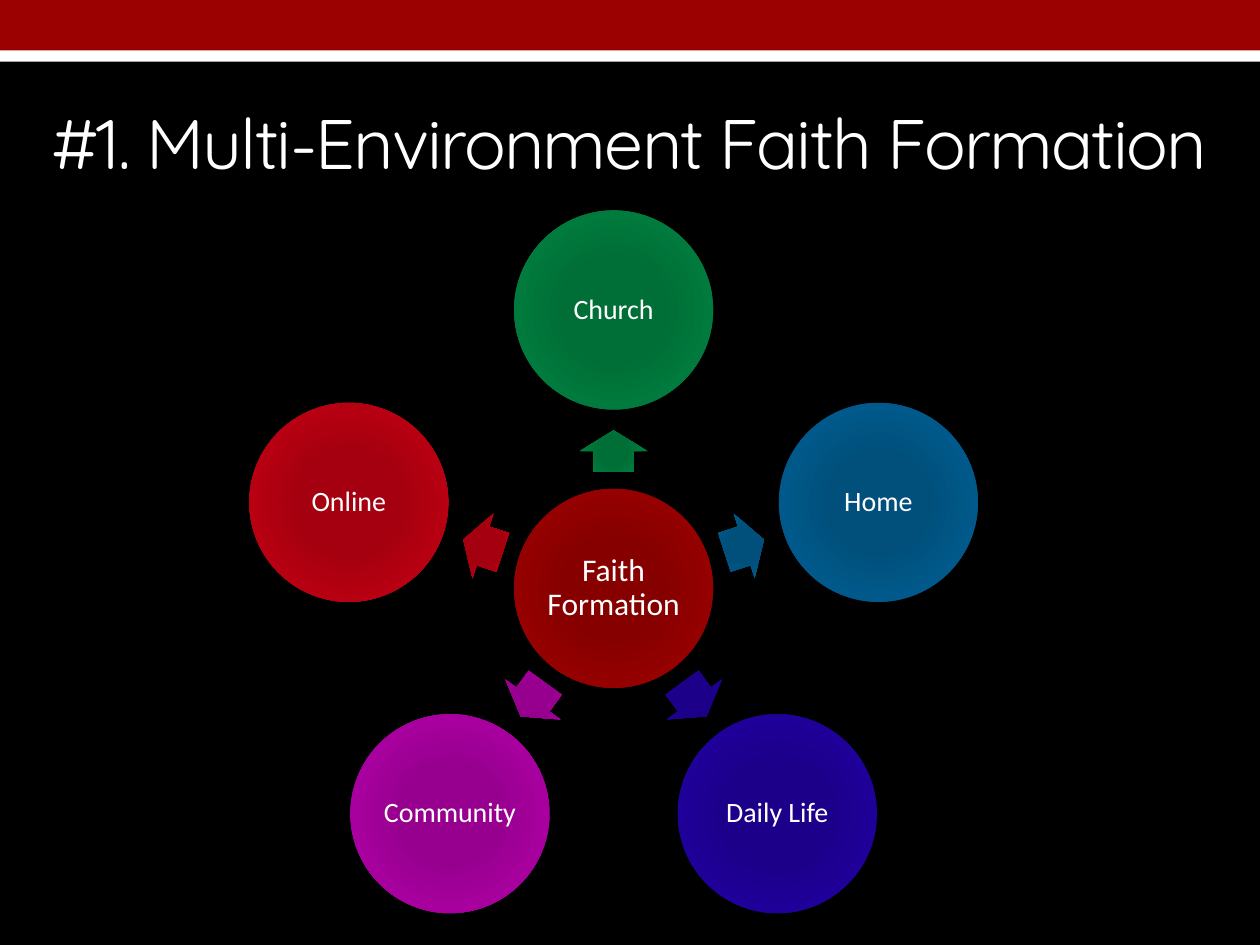
import math

import pptx
import pptx.dml.color
import pptx.enum.shapes
import pptx.enum.text
import pptx.oxml
import pptx.oxml.ns
import pptx.util

WIDTH, HEIGHT = 10, 7.5
HUB = (4.87, 4.67)
CIRCLE_SIZE = 1.58
ORBIT, ARROW_ORBIT = 2.21, 1.09
ARROW_LENGTH, ARROW_BREADTH = 0.33, 0.54

HUB_TONES = ("860000", "950000", "9B0101")
ENVIRONMENTS = [
    ("Church", ("006E37", "007A3D", "008040")),
    ("Home", ("00507B", "00598A", "025D8E")),
    ("Daily Life", ("1C0089", "1F0099", "23059B")),
    ("Community", ("97008F", "A8009F", "A808A0")),
    ("Online", ("A4000F", "B70011", "B50B1B")),
]


def rgb(hex_colour):
    return pptx.dml.color.RGBColor.from_string(hex_colour)


def write(frame, text, size, font="Calibri", colour="FFFFFF", inset=0.02,
          line_spacing=0.9, tracking=None):
    """Fill a text frame with one centred paragraph; tracking is in points."""
    frame.word_wrap = True
    frame.auto_size = pptx.enum.text.MSO_AUTO_SIZE.NONE
    frame.vertical_anchor = pptx.enum.text.MSO_ANCHOR.MIDDLE
    frame.margin_left = frame.margin_right = pptx.util.Inches(inset)
    frame.margin_top = frame.margin_bottom = pptx.util.Inches(inset)
    paragraph = frame.paragraphs[0]
    paragraph.alignment = pptx.enum.text.PP_ALIGN.CENTER
    paragraph.line_spacing = line_spacing
    run = paragraph.add_run()
    run.text = text
    run.font.size = pptx.util.Pt(size)
    run.font.name = font
    run.font.color.rgb = rgb(colour)
    if tracking is not None:
        run.font._element.set("spc", str(round(tracking * 100)))


def radial_fill(shape, tones):
    """Shade from the first tone at the centre to the last at the rim."""
    inner, middle, outer = tones
    stops = "".join(
        f'<a:gs pos="{share * 1000}"><a:srgbClr val="{tone}"/></a:gs>'
        for share, tone in ((0, inner), (34, inner), (70, middle), (100, outer)))
    radial = pptx.oxml.parse_xml(
        f'<a:gradFill {pptx.oxml.ns.nsdecls("a")} rotWithShape="1">'
        f'<a:gsLst>{stops}</a:gsLst><a:path path="circle">'
        '<a:fillToRect l="100000" t="100000" r="100000" b="100000"/>'
        '</a:path></a:gradFill>')
    shape.fill.gradient()
    properties = shape._element.spPr
    properties.replace(properties.find(pptx.oxml.ns.qn("a:gradFill")), radial)


class RadialSlide:
    def __init__(self, presentation, background="000000"):
        self.slide = presentation.slides.add_slide(presentation.slide_layouts[5])
        self.slide.background.fill.solid()
        self.slide.background.fill.fore_color.rgb = rgb(background)

    def preset(self, kind, left, top, width, height):
        shape = self.slide.shapes.add_shape(
            kind, *map(pptx.util.Inches, (left, top, width, height)))
        shape.shadow.inherit = False
        shape.line.fill.background()
        return shape

    def band(self, top, height, colour):
        band = self.preset(pptx.enum.shapes.MSO_SHAPE.RECTANGLE, 0, top, WIDTH, height)
        band.fill.solid()
        band.fill.fore_color.rgb = rgb(colour)

    def title(self, text, top, height):
        title = self.slide.shapes.title
        title.left, title.top, title.width, title.height = map(
            pptx.util.Inches, (0, top, WIDTH, height))
        write(title.text_frame, text, 40, font="Quicksand", inset=0.05,
              line_spacing=1, tracking=-1)

    def centred(self, kind, centre, width, height, tones):
        x, y = centre
        shape = self.preset(kind, x - width / 2, y - height / 2, width, height)
        radial_fill(shape, tones)
        return shape

    def circle(self, text, centre, tones, size=16):
        circle = self.centred(pptx.enum.shapes.MSO_SHAPE.OVAL, centre,
                              CIRCLE_SIZE, CIRCLE_SIZE, tones)
        write(circle.text_frame, text, size)

    def arrow(self, centre, angle, tones):
        arrow = self.centred(pptx.enum.shapes.MSO_SHAPE.RIGHT_ARROW, centre,
                             ARROW_LENGTH, ARROW_BREADTH, tones)
        arrow.adjustments[0] = 0.6
        arrow.rotation = angle % 360


def around_hub(angle, distance):
    turn = math.radians(angle)
    return HUB[0] + distance * math.cos(turn), HUB[1] + distance * math.sin(turn)


def main():
    presentation = pptx.Presentation()
    presentation.slide_width = pptx.util.Inches(WIDTH)
    presentation.slide_height = pptx.util.Inches(HEIGHT)

    page = RadialSlide(presentation)
    page.band(0.24, 0.25, "FFFFFF")
    page.band(0, 0.4, "9B0101")
    page.title("#1. Multi-Environment Faith Formation", 0.58, 1.08)
    page.circle("Faith Formation", HUB, HUB_TONES, size=18)
    for index, (environment, tones) in enumerate(ENVIRONMENTS):
        angle = -90 + index * 360 / len(ENVIRONMENTS)
        page.arrow(around_hub(angle, ARROW_ORBIT), angle, tones)
        page.circle(environment, around_hub(angle, ORBIT), tones)

    presentation.save("out.pptx")


if __name__ == "__main__":
    main()
